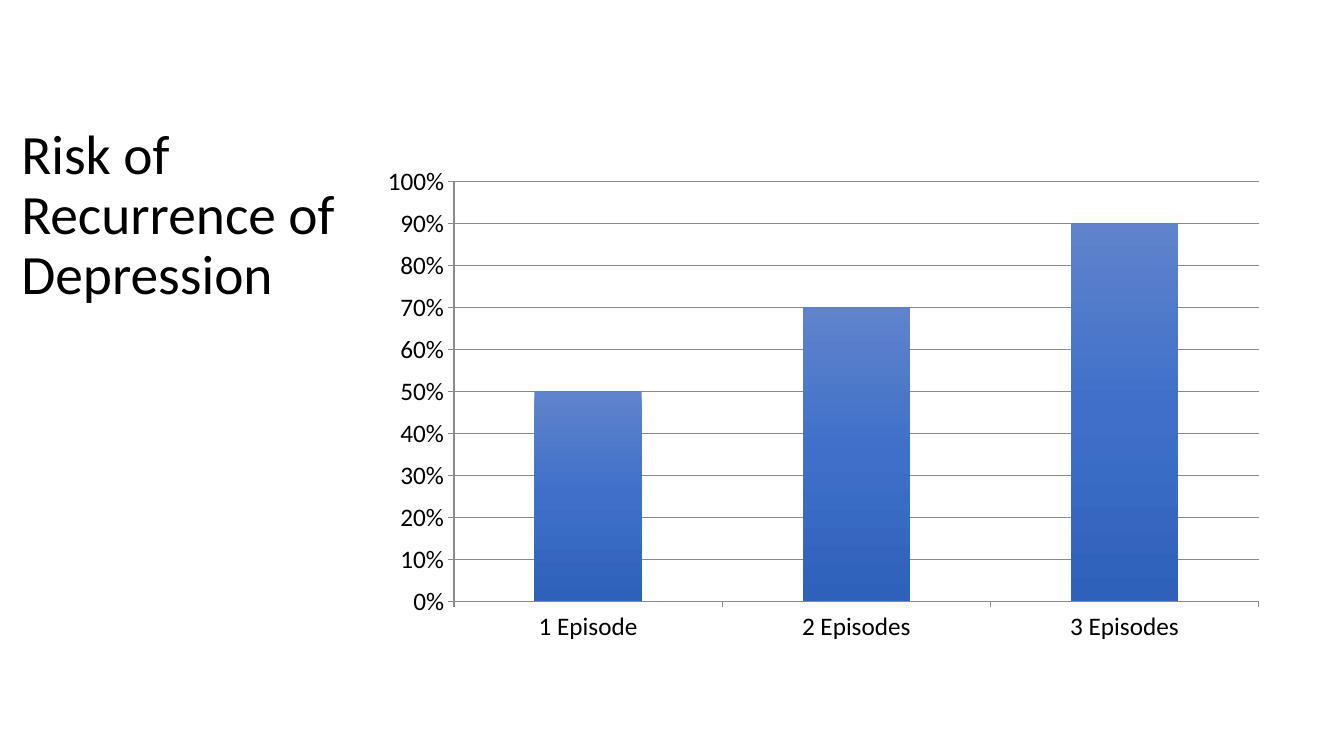
from dataclasses import dataclass

from lxml import etree
from pptx import Presentation
from pptx.chart.data import CategoryChartData
from pptx.dml.color import RGBColor
from pptx.enum.chart import XL_CHART_TYPE, XL_TICK_MARK
from pptx.enum.text import MSO_ANCHOR, MSO_AUTO_SIZE, PP_ALIGN
from pptx.oxml.ns import qn
from pptx.util import Pt

COLUMNS = XL_CHART_TYPE.COLUMN_CLUSTERED
TICK_OUTSIDE, TICK_NONE = XL_TICK_MARK.OUTSIDE, XL_TICK_MARK.NONE
MIDDLE, NO_AUTOFIT, LEFT = MSO_ANCHOR.MIDDLE, MSO_AUTO_SIZE.NONE, PP_ALIGN.LEFT
TITLE_ONLY = 5


@dataclass(frozen=True)
class Theme:
    font: str = "Calibri"
    text: str = "000000"
    rule: str = "8B8B8B"
    # Gradient stops from top to bottom: position in percent, colour
    column: tuple = ((0, "6083CB"), (50, "3E70CA"), (100, "2E61BA"))
    title_size: float = 39.6
    chart_size: float = 18


def apply(target, values):
    for name, value in values.items():
        setattr(target, name, value)


class SlideBuilder:
    def __init__(self, deck, theme):
        self.theme = theme
        self.slide = deck.slides.add_slide(deck.slide_layouts[TITLE_ONLY])

    def style_font(self, font, size):
        apply(font, {"name": self.theme.font, "size": Pt(size), "bold": False})
        font.color.rgb = RGBColor.from_string(self.theme.text)

    def style_rule(self, line):
        line.width = Pt(0.75)
        line.color.rgb = RGBColor.from_string(self.theme.rule)

    def title(self, lines, left, top, width, height):
        box = self.slide.shapes.title
        apply(box, {"left": Pt(left), "top": Pt(top),
                    "width": Pt(width), "height": Pt(height)})
        frame = box.text_frame
        apply(frame, {"word_wrap": True, "auto_size": NO_AUTOFIT,
                      "vertical_anchor": MIDDLE})
        para = frame.paragraphs[0]
        apply(para, {"text": "\v".join(lines), "alignment": LEFT,
                     "line_spacing": 0.9})
        for span in para.runs:
            self.style_font(span.font, self.theme.title_size)

    def gradient(self, series):
        fill = series.format.fill
        fill.gradient()
        fill.gradient_angle = 270
        stops = next(series._element.iter(qn("a:gsLst")))
        for stop in list(stops):
            stops.remove(stop)
        for position, color in self.theme.column:
            stop = etree.SubElement(stops, qn("a:gs"), pos=str(position * 1000))
            etree.SubElement(stop, qn("a:srgbClr"), val=color)

    def column_chart(self, name, values, left, top, width, height):
        data = CategoryChartData(number_format="0%")
        data.categories = list(values)
        data.add_series(name, list(values.values()))
        chart = self.slide.shapes.add_chart(
            COLUMNS, Pt(left), Pt(top), Pt(width), Pt(height), data).chart
        apply(chart, {"has_legend": False, "has_title": False})
        self.style_font(chart.font, self.theme.chart_size)

        # Columns
        plot = chart.plots[0]
        apply(plot, {"gap_width": 150, "vary_by_categories": False})
        self.gradient(plot.series[0])

        # Axes and gridlines
        for axis in (chart.category_axis, chart.value_axis):
            apply(axis, {"major_tick_mark": TICK_OUTSIDE,
                         "minor_tick_mark": TICK_NONE})
            self.style_rule(axis.format.line)
        apply(chart.value_axis, {"minimum_scale": 0, "maximum_scale": 1,
                                 "major_unit": 0.1,
                                 "has_major_gridlines": True})
        apply(chart.value_axis.tick_labels, {"number_format": "0%",
                                             "number_format_is_linked": False})
        self.style_rule(chart.value_axis.major_gridlines.format.line)


def main():
    deck = Presentation()
    apply(deck, {"slide_width": Pt(960), "slide_height": Pt(540)})
    page = SlideBuilder(deck, Theme())

    # Heading
    page.title(["Risk of", "Recurrence of", "Depression"], 8, 109.5, 864, 90)

    # Recurrence by number of earlier episodes
    risk = {"1 Episode": 0.5, "2 Episodes": 0.7, "3 Episodes": 0.9}
    page.column_chart("Series 1", risk, 264, 111.6, 648, 354)

    deck.save("out.pptx")


if __name__ == "__main__":
    main()
